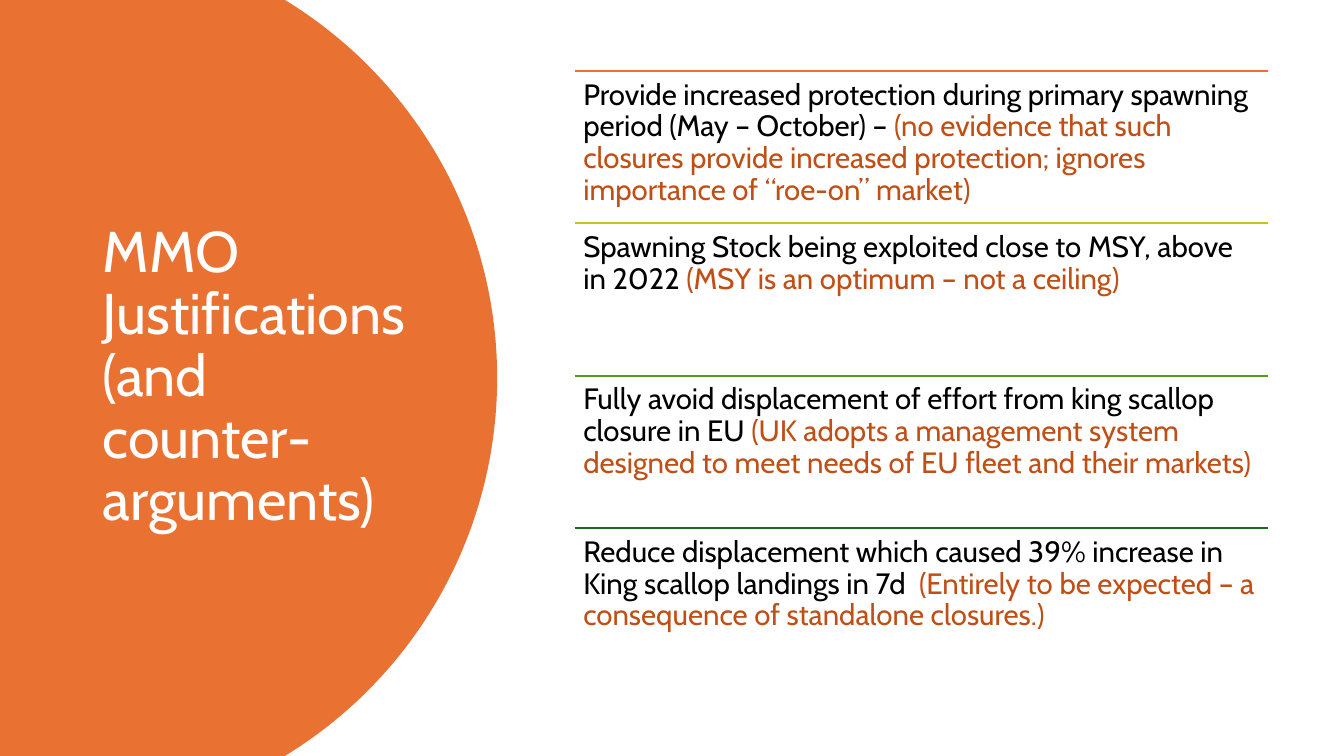
from math import asin, cos, sin

from lxml.etree import SubElement
from pptx import Presentation
from pptx.dml.color import RGBColor
from pptx.enum.shapes import MSO_CONNECTOR as Connector
from pptx.enum.text import MSO_ANCHOR as Anchor, MSO_AUTO_SIZE as AutoSize, PP_ALIGN as Align
from pptx.oxml.ns import qn
from pptx.util import Cm, Pt

WIDTH, HEIGHT = 33.87, 19.05
ORANGE, RUST, WHITE, BLACK = "E97132", "C04F15", "FFFFFF", "000000"
LEFT, TOP, ROW_WIDTH, ROW_HEIGHT = 14.48, 1.79, 17.47, 3.84
ARC_START, ARC_TIP = 7.18, 12.53
ARC_STEPS = 120

ARGUMENTS = [
    (ORANGE, "Provide increased protection during primary spawning period (May – October) – ",
     "(no evidence that such closures provide increased protection; "
     "ignores importance of “roe-on” market)"),
    ("CBC11E", "Spawning Stock being exploited close to MSY, above in 2022 ",
     "(MSY is an optimum – not a ceiling)"),
    ("56991D", "Fully avoid displacement of effort from king scallop closure in EU ",
     "(UK adopts a management system designed to meet needs of EU fleet and their markets)"),
    ("196B24", "Reduce displacement which caused 39% increase in King scallop landings in 7d  ",
     "(Entirely to be expected – a consequence of standalone closures.)"),
]


def colour(value):
    """Turn a hex string into a colour."""
    return RGBColor.from_string(value)


def add_run(paragraph, text, size=21, fill=BLACK, font="Cabin"):
    """Append formatted text to a paragraph."""
    run = paragraph.add_run()
    run.text = text
    run.font.size = Pt(size)
    run.font.name = font
    run.font.color.rgb = colour(fill)


class SlideBuilder:
    """Hold the slide and draw its kinds of element."""

    def __init__(self, slide, line_width=1.5, line_spacing=0.9):
        """Keep the slide and its shared style."""
        self.slide = slide
        self.shapes = slide.shapes
        self.line_width = line_width
        self.line_spacing = line_spacing

    def add_panel(self, start, tip, fill):
        """Draw the left panel, bounded by a circular arc."""
        bulge, half = tip - start, HEIGHT / 2
        radius = (half ** 2 + bulge ** 2) / (2 * bulge)
        limit = asin(half / radius)
        angles = [limit * (2 * step / ARC_STEPS - 1) for step in range(ARC_STEPS + 1)]
        points = [(tip - radius + radius * cos(angle), half + radius * sin(angle))
                  for angle in angles] + [(0, HEIGHT)]
        builder = self.shapes.build_freeform(0, 0)
        builder.add_line_segments([(Cm(x), Cm(y)) for x, y in points], close=True)
        panel = builder.convert_to_shape()
        panel.shadow.inherit = False
        panel.fill.solid()
        panel.fill.fore_color.rgb = colour(fill)
        panel.line.fill.background()

    def add_title(self, text, left, top, width, height):
        """Place and format the title in front of the panel."""
        title = self.shapes.title
        title.element.getparent().append(title.element)
        title.left, title.top, title.width, title.height = map(Cm, (left, top, width, height))
        frame = title.text_frame
        frame.word_wrap = True
        frame.auto_size = AutoSize.NONE
        frame.vertical_anchor = Anchor.MIDDLE
        paragraph = frame.paragraphs[0]
        paragraph.alignment = Align.LEFT
        paragraph.line_spacing = self.line_spacing
        add_run(paragraph, text, size=41, fill=WHITE)

    def add_rule(self, left, top, width, fill):
        """Draw a horizontal rule."""
        rule = self.shapes.add_connector(
            Connector.STRAIGHT, Cm(left), Cm(top), Cm(left + width), Cm(top))
        rule.line.color.rgb = colour(fill)
        rule.line.width = Pt(self.line_width)
        SubElement(rule.element.spPr, qn("a:effectLst"))

    def add_argument(self, left, top, width, height, claim, reply):
        """Write a claim followed by its reply."""
        frame = self.shapes.add_textbox(Cm(left), Cm(top), Cm(width), Cm(height)).text_frame
        frame.word_wrap = True
        frame.margin_left = frame.margin_right = Cm(0.22)
        frame.margin_top = frame.margin_bottom = Cm(0.22)
        paragraph = frame.paragraphs[0]
        paragraph.line_spacing = self.line_spacing
        add_run(paragraph, claim)
        add_run(paragraph, reply, fill=RUST)


def main():
    """Build and save the slide."""
    presentation = Presentation()
    presentation.slide_width, presentation.slide_height = Cm(WIDTH), Cm(HEIGHT)
    builder = SlideBuilder(presentation.slides.add_slide(presentation.slide_layouts[5]))
    builder.add_panel(ARC_START, ARC_TIP, ORANGE)
    builder.add_title("MMO Justifications (and counter-arguments)", 2.33, TOP, 8.2, 15.46)
    for row, (fill, claim, reply) in enumerate(ARGUMENTS):
        top = TOP + row * ROW_HEIGHT
        builder.add_rule(LEFT, top, ROW_WIDTH, fill)
        builder.add_argument(LEFT, top, ROW_WIDTH, ROW_HEIGHT, claim, reply)
    presentation.save("out.pptx")


if __name__ == "__main__":
    main()
